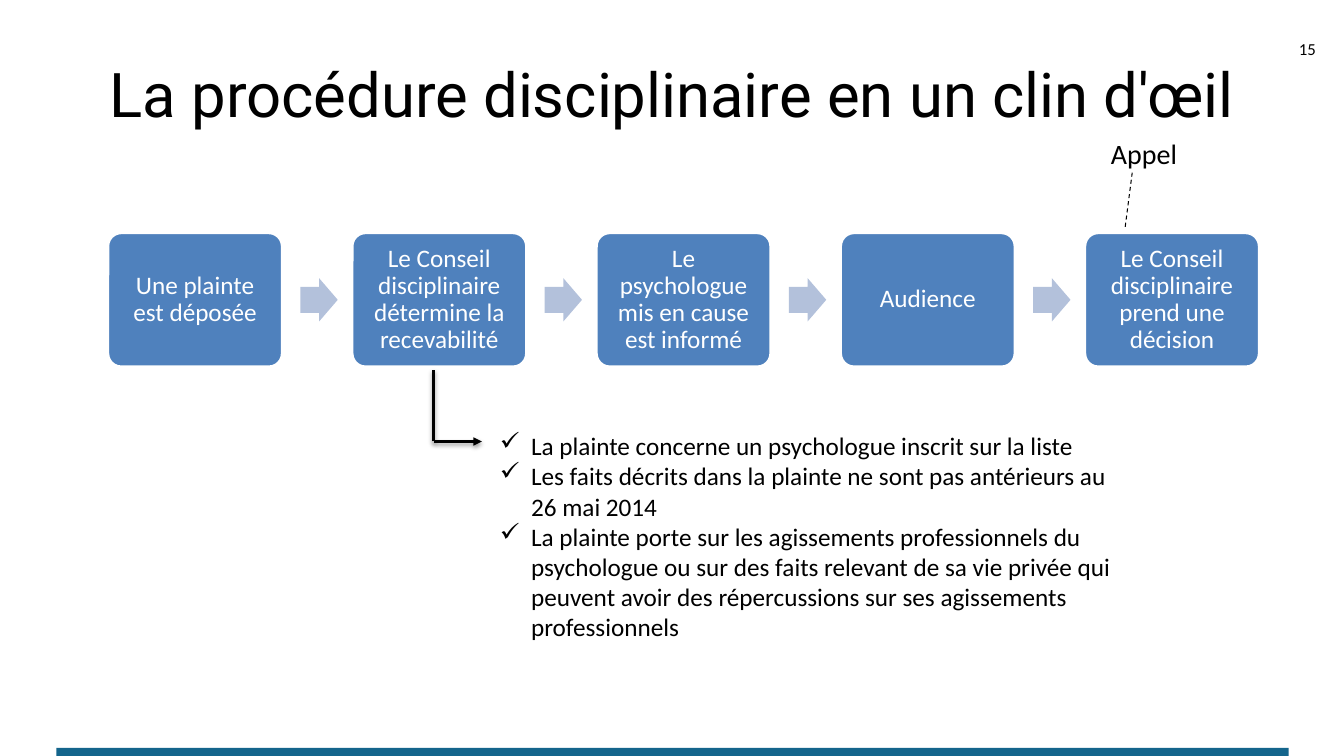
import pptx
import pptx.dml.color
import pptx.enum.dml
import pptx.enum.shapes
import pptx.enum.text
import pptx.oxml
import pptx.oxml.ns
import pptx.util

Inches = pptx.util.Inches
Pt = pptx.util.Pt
SHAPES = pptx.enum.shapes.MSO_SHAPE
ALIGN = pptx.enum.text.PP_ALIGN
ANCHOR = pptx.enum.text.MSO_ANCHOR

STEPS = [
    "Une plainte est déposée",
    "Le Conseil disciplinaire détermine la recevabilité",
    "Le psychologue mis en cause est informé",
    "Audience",
    "Le Conseil disciplinaire prend une décision",
]
CRITERIA = [
    "La plainte concerne un psychologue inscrit sur la liste",
    "Les faits décrits dans la plainte ne sont pas antérieurs au 26 mai 2014",
    "La plainte porte sur les agissements professionnels du psychologue ou sur des faits "
    "relevant de sa vie privée qui peuvent avoir des répercussions sur ses agissements "
    "professionnels",
]
SHADOW = (
    '<a:outerShdw blurRad="39370" dist="20320" dir="5400000" rotWithShape="0">'
    '<a:srgbClr val="000000"><a:alpha val="38000"/></a:srgbClr></a:outerShdw>'
)


def color(value):
    return pptx.dml.color.RGBColor.from_string(value)


def element(tag, content="", **attributes):
    listed = "".join(f' {name}="{value}"' for name, value in attributes.items())
    namespace = pptx.oxml.ns.nsdecls("a")
    return pptx.oxml.parse_xml(f"<a:{tag} {namespace}{listed}>{content}</a:{tag}>")


class ProcedureSlide:
    text_color = "000000"
    box_color = "4F81BD"
    arrow_color = "B3C1DB"
    bar_color = "14658C"
    light = "FFFFFF"
    body_font = "Calibri"
    title_font = "Roboto"

    def __init__(self, presentation):
        self.slide = presentation.slides.add_slide(presentation.slide_layouts[5])

    def add_text_run(self, paragraph, text, size, ink=None, font=None, align=ALIGN.LEFT):
        paragraph.alignment = align
        run = paragraph.add_run()
        run.text = text
        run.font.size = Pt(size)
        run.font.name = font or self.body_font
        run.font.color.rgb = color(ink or self.text_color)

    def title(self, text, left, top, width, height):
        shape = self.slide.shapes.title
        shape.left, shape.top = Inches(left), Inches(top)
        shape.width, shape.height = Inches(width), Inches(height)
        frame = shape.text_frame
        frame.auto_size = pptx.enum.text.MSO_AUTO_SIZE.NONE
        frame.vertical_anchor = ANCHOR.MIDDLE
        self.add_text_run(
            frame.paragraphs[0], text, 44, font=self.title_font, align=ALIGN.CENTER)

    def block(self, kind, left, top, width, height, fill, adjustments=()):
        shape = self.slide.shapes.add_shape(
            kind, Inches(left), Inches(top), Inches(width), Inches(height))
        shape.shadow.inherit = False
        shape.fill.solid()
        shape.fill.fore_color.rgb = color(fill)
        shape.line.fill.background()
        for index, value in enumerate(adjustments):
            shape.adjustments[index] = value
        return shape

    def step(self, text, left, top, width, height):
        shape = self.block(
            SHAPES.ROUNDED_RECTANGLE, left, top, width, height, self.box_color, [0.1])
        shape.line.color.rgb = color(self.light)
        shape.line.width = Pt(2)
        frame = shape.text_frame
        frame.word_wrap = True
        frame.vertical_anchor = ANCHOR.MIDDLE
        frame.margin_left = frame.margin_right = Inches(0.11)
        frame.margin_top = frame.margin_bottom = Inches(0.11)
        paragraph = frame.paragraphs[0]
        paragraph.line_spacing = 0.9
        self.add_text_run(paragraph, text, 18, ink=self.light, align=ALIGN.CENTER)

    def text(self, lines, left, top, width, height, size,
             align=ALIGN.LEFT, anchor=ANCHOR.TOP, checked=False):
        box = self.slide.shapes.add_textbox(
            Inches(left), Inches(top), Inches(width), Inches(height))
        frame = box.text_frame
        frame.word_wrap = True
        frame.vertical_anchor = anchor
        for index, line in enumerate(lines):
            paragraph = frame.add_paragraph() if index else frame.paragraphs[0]
            if checked:
                properties = paragraph._p.get_or_add_pPr()
                properties.set("marL", str(Inches(0.31)))
                properties.set("indent", str(Inches(-0.31)))
                properties.append(element("buChar", char="✓"))
            self.add_text_run(paragraph, line, size, align=align)

    def line(self, start, end, width, dashed=False, arrow=False, shadow=""):
        connector = self.slide.shapes.add_connector(
            pptx.enum.shapes.MSO_CONNECTOR.STRAIGHT,
            *(Inches(value) for value in start + end))
        connector.line.color.rgb = color(self.text_color)
        connector.line.width = Pt(width)
        if dashed:
            connector.line.dash_style = pptx.enum.dml.MSO_LINE.DASH
        if arrow:
            connector.line._get_or_add_ln().append(element("tailEnd", type="triangle"))
        connector._element.spPr.append(element("effectLst", shadow))


def main():
    presentation = pptx.Presentation()
    presentation.slide_width = Inches(13.33)
    presentation.slide_height = Inches(7.5)
    page = ProcedureSlide(presentation)

    page.block(SHAPES.RECTANGLE, 0.56, 7.42, 12.22, 0.08, page.bar_color)
    page.title("La procédure disciplinaire en un clin d'œil", 0.67, 0.3, 12, 1.25)

    first_left, last_left = 1.07, 10.76
    pitch = (last_left - first_left) / (len(STEPS) - 1)
    for index, step in enumerate(STEPS):
        left = first_left + index * pitch
        page.step(step, left, 2.31, 1.73, 1.33)
        if index < len(STEPS) - 1:
            page.block(SHAPES.RIGHT_ARROW, left + 1.91, 2.76, 0.37, 0.43,
                       page.arrow_color, [0.6, 0.5])

    corner = (4.3, 4.38)
    page.line(corner, (4.78, 4.38), 2, arrow=True, shadow=SHADOW)
    page.line(corner, (4.3, 3.67), 2, shadow=SHADOW)
    page.text(CRITERIA, 4.86, 4.22, 6.3, 2.22, 18, checked=True)

    page.text(["Appel"], 10.92, 1.31, 1.57, 0.44, 20)
    page.line((11.16, 2.25), (11.23, 1.71), 0.75, dashed=True)
    page.text(["15"], 12.4, 0.28, 0.75, 0.4, 12, align=ALIGN.RIGHT, anchor=ANCHOR.MIDDLE)

    presentation.save("out.pptx")


if __name__ == "__main__":
    main()
